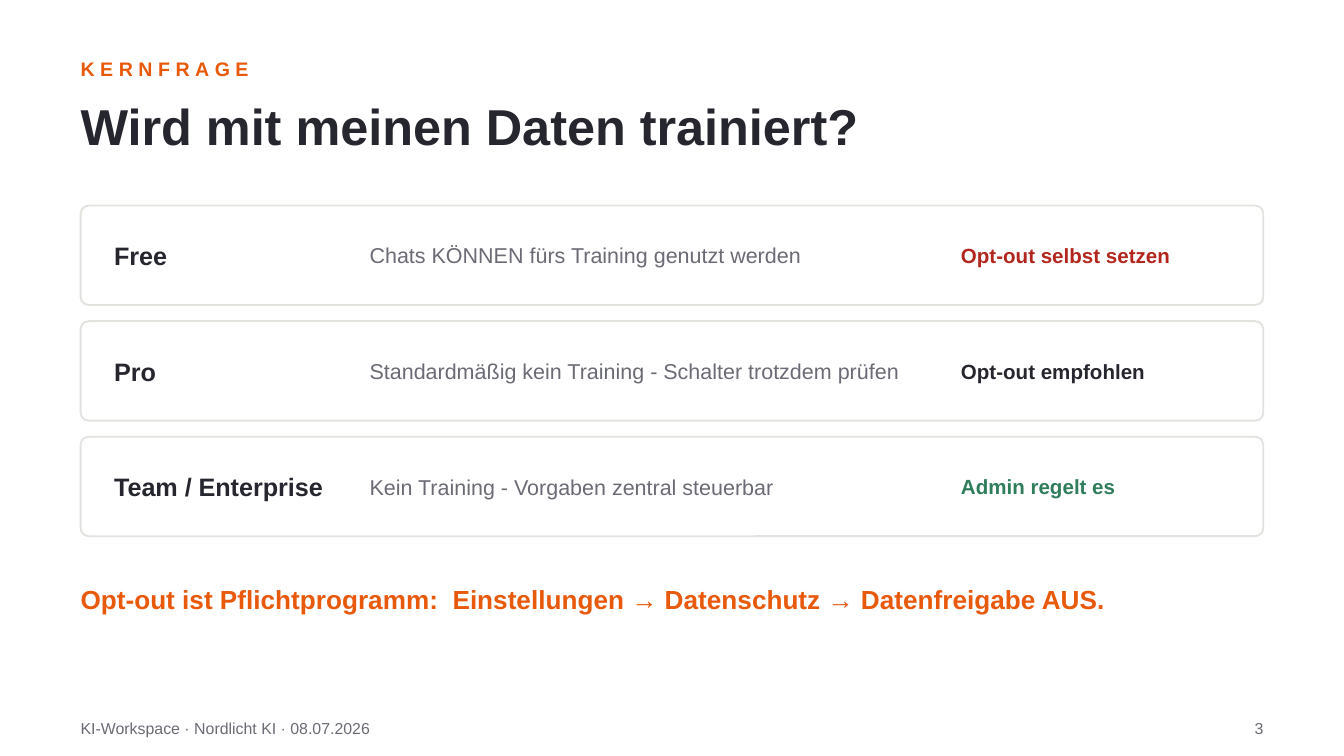
from pptx import Presentation
from pptx.dml.color import RGBColor
from pptx.enum.shapes import MSO_SHAPE
from pptx.enum.text import MSO_ANCHOR, PP_ALIGN
from pptx.util import Inches, Pt

COLORS = {
    "accent": "E8590C",
    "ink": "26262E",
    "muted": "6B6B75",
    "border": "E4E2DF",
    "card": "FFFFFF",
    "warning": "B3261E",
    "success": "2F7D5B",
}
PLANS = [
    ("Free", "Chats KÖNNEN fürs Training genutzt werden",
     "Opt-out selbst setzen", "warning"),
    ("Pro", "Standardmäßig kein Training - Schalter trotzdem prüfen",
     "Opt-out empfohlen", "ink"),
    ("Team / Enterprise", "Kein Training - Vorgaben zentral steuerbar",
     "Admin regelt es", "success"),
]


def rgb(name):
    """Return the named palette colour."""
    return RGBColor.from_string(COLORS[name])


def add_text(page, left, top, width, height, spans, size, color,
             bold=False, align=PP_ALIGN.LEFT):
    """Add a middle-anchored line made of (text, letter spacing) spans."""
    box = page.shapes.add_textbox(Inches(left), Inches(top), Inches(width), Inches(height))
    frame = box.text_frame
    frame.word_wrap = True
    frame.vertical_anchor = MSO_ANCHOR.MIDDLE
    frame.margin_left = frame.margin_right = frame.margin_top = frame.margin_bottom = 0
    para = frame.paragraphs[0]
    para.alignment = align
    for text, spacing in spans:
        span = para.add_run()
        span.text = text
        span.font.name = "Arial"
        span.font.size = Pt(size)
        span.font.bold = bold
        span.font.color.rgb = rgb(color)
        if spacing:
            span.font._element.set("spc", str(round(spacing * 100)))


def add_header(page, left, top, width):
    """Place the kicker and the title below it."""
    add_text(page, left, top, width, 0.26, [("KERNFRAGE", 3)], 10.5, "accent", True)
    add_text(page, left, top + 0.24, width, 0.62,
             [("Wird mit meinen Daten trainiert?", 0)], 27, "ink", True)


def add_plan_card(page, left, top, width, height, plan):
    """Place one outlined card with plan name, rule and advice."""
    name, rule, advice, advice_color = plan
    card = page.shapes.add_shape(MSO_SHAPE.ROUNDED_RECTANGLE, Inches(left), Inches(top),
                                 Inches(width), Inches(height))
    card.adjustments[0] = 0.06 / height
    card.shadow.inherit = False
    card.fill.solid()
    card.fill.fore_color.rgb = rgb("card")
    card.line.color.rgb = rgb("border")
    card.line.width = Pt(1)
    columns = [
        (0.25, 1.8, name, 13.5, "ink", True),
        (2.15, 4.3, rule, 11.5, "muted", False),
        (6.55, 2.1, advice, 11, advice_color, True),
    ]
    for offset, column_width, text, size, color, bold in columns:
        add_text(page, left + offset, top, column_width, height,
                 [(text, 0)], size, color, bold)


def add_plan_list(page, left, top, width, card_height, gap):
    """Stack the plan cards at equal gaps."""
    for index, plan in enumerate(PLANS):
        add_plan_card(page, left, top + index * (card_height + gap), width, card_height, plan)


def add_takeaway(page, left, top, width, height):
    """Place the closing instruction with a widened gap after the colon."""
    spans = [
        ("Opt-out ist Pflichtprogramm:", 0),
        (" ", 3.5),
        ("Einstellungen → Datenschutz → Datenfreigabe AUS.", 0),
    ]
    add_text(page, left, top, width, height, spans, 14, "accent", True)


def add_footer(page, left, top, width, height):
    """Place the source line at the left and the page number at the right."""
    add_text(page, left, top, 6, height,
             [("KI-Workspace · Nordlicht KI · 08.07.2026", 0)], 8.5, "muted")
    add_text(page, left + width - 0.6, top, 0.6, height, [("3", 0)], 8.5, "muted",
             align=PP_ALIGN.RIGHT)


def main():
    """Build and save the slide."""
    deck = Presentation()
    deck.slide_width = Inches(10)
    deck.slide_height = Inches(10 * 9 / 16)
    page = deck.slides.add_slide(deck.slide_layouts[6])
    left, width = 0.6, 8.8
    add_header(page, left, 0.38, width)
    add_plan_list(page, left, 1.53, width, 0.74, 0.12)
    add_takeaway(page, left, 4.26, width, 0.4)
    add_footer(page, left, 5.3, width, 0.24)
    deck.save("out.pptx")


if __name__ == "__main__":
    main()
